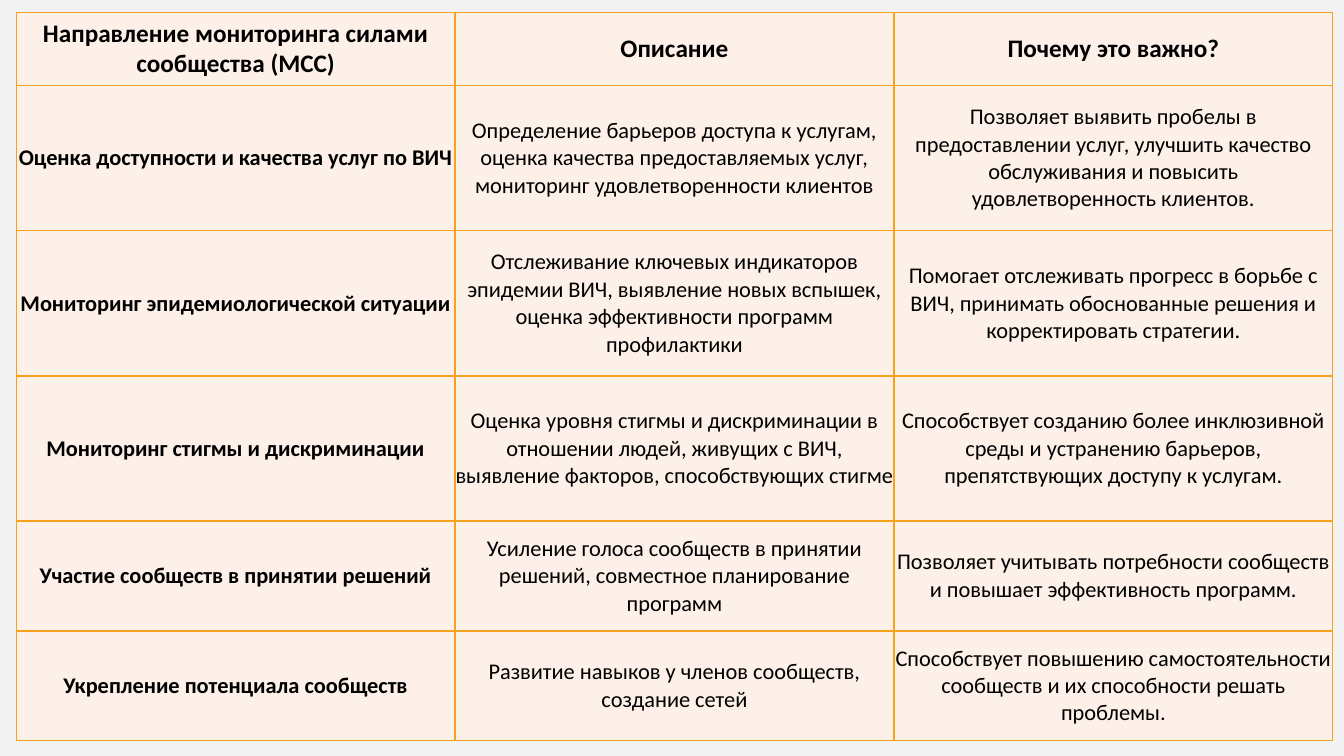
from lxml.etree import SubElement
from pptx import Presentation
from pptx.dml.color import RGBColor
from pptx.enum.text import MSO_ANCHOR, PP_ALIGN
from pptx.oxml.ns import qn
from pptx.util import Inches, Pt

WIDTH, HEIGHT = 13.33, 7.5
LEFT, TOP, TABLE_WIDTH = 0.16, 0.12, 13.06
ROW_HEIGHTS = [0.73, 1.44, 1.44, 1.44, 1.09, 1.09]
BACKGROUND, CELL_FILL, BORDER, INK = "F2F2F2", "FDF0E8", "F6A21D", "000000"

ROWS = [
    ("Направление мониторинга силами сообщества (МСС)",
     "Описание",
     "Почему это важно?"),
    ("Оценка доступности и качества услуг по ВИЧ",
     "Определение барьеров доступа к услугам, оценка качества "
     "предоставляемых услуг, мониторинг удовлетворенности клиентов",
     "Позволяет выявить пробелы в предоставлении услуг, улучшить качество "
     "обслуживания и повысить удовлетворенность клиентов."),
    ("Мониторинг эпидемиологической ситуации",
     "Отслеживание ключевых индикаторов эпидемии ВИЧ, выявление новых "
     "вспышек, оценка эффективности программ профилактики",
     "Помогает отслеживать прогресс в борьбе с ВИЧ, принимать обоснованные "
     "решения и корректировать стратегии."),
    ("Мониторинг стигмы и дискриминации",
     "Оценка уровня стигмы и дискриминации в отношении людей, живущих с ВИЧ, "
     "выявление факторов, способствующих стигме",
     "Способствует созданию более инклюзивной среды и устранению барьеров, "
     "препятствующих доступу к услугам."),
    ("Участие сообществ в принятии решений",
     "Усиление голоса сообществ в принятии решений, совместное планирование "
     "программ",
     "Позволяет учитывать потребности сообществ и повышает эффективность "
     "программ."),
    ("Укрепление потенциала сообществ",
     "Развитие навыков у членов сообществ, создание сетей",
     "Способствует повышению самостоятельности сообществ и их способности "
     "решать проблемы."),
]


def paint(fill, color):
    fill.solid()
    fill.fore_color.rgb = RGBColor.from_string(color)


def add_borders(cell, color, points):
    properties = cell._tc.get_or_add_tcPr()
    for side in ("a:lnL", "a:lnR", "a:lnT", "a:lnB"):
        line = SubElement(properties, qn(side), w=str(Pt(points)))
        solid = SubElement(line, qn("a:solidFill"))
        SubElement(solid, qn("a:srgbClr"), val=color)


def fill_cell(cell, text, size, bold):
    # Borders come before the fill in the cell's properties
    add_borders(cell, BORDER, 1)
    paint(cell.fill, CELL_FILL)
    cell.margin_left = cell.margin_right = cell.margin_top = cell.margin_bottom = 0
    cell.vertical_anchor = MSO_ANCHOR.MIDDLE
    cell.text_frame.text = text
    para = cell.text_frame.paragraphs[0]
    para.alignment = PP_ALIGN.CENTER
    font = para.runs[0].font
    font.name, font.size, font.bold = "Calibri", Pt(size), bold
    font.color.rgb = RGBColor.from_string(INK)


def add_monitoring_table(page):
    columns = len(ROWS[0])
    frame = page.shapes.add_table(
        len(ROWS), columns, Inches(LEFT), Inches(TOP),
        Inches(TABLE_WIDTH), Inches(sum(ROW_HEIGHTS)))
    table = frame.table
    table.first_row = table.horz_banding = False
    for column in table.columns:
        column.width = Inches(TABLE_WIDTH / columns)
    for row, height in zip(table.rows, ROW_HEIGHTS):
        row.height = Inches(height)

    # Header row and first column are bold
    for row_index, texts in enumerate(ROWS):
        header = row_index == 0
        for column_index, text in enumerate(texts):
            fill_cell(table.cell(row_index, column_index), text,
                      size=18 if header else 16,
                      bold=header or column_index == 0)


def main():
    deck = Presentation()
    deck.slide_width, deck.slide_height = Inches(WIDTH), Inches(HEIGHT)
    page = deck.slides.add_slide(deck.slide_layouts[6])
    paint(page.background.fill, BACKGROUND)
    add_monitoring_table(page)
    deck.save("out.pptx")


if __name__ == "__main__":
    main()
